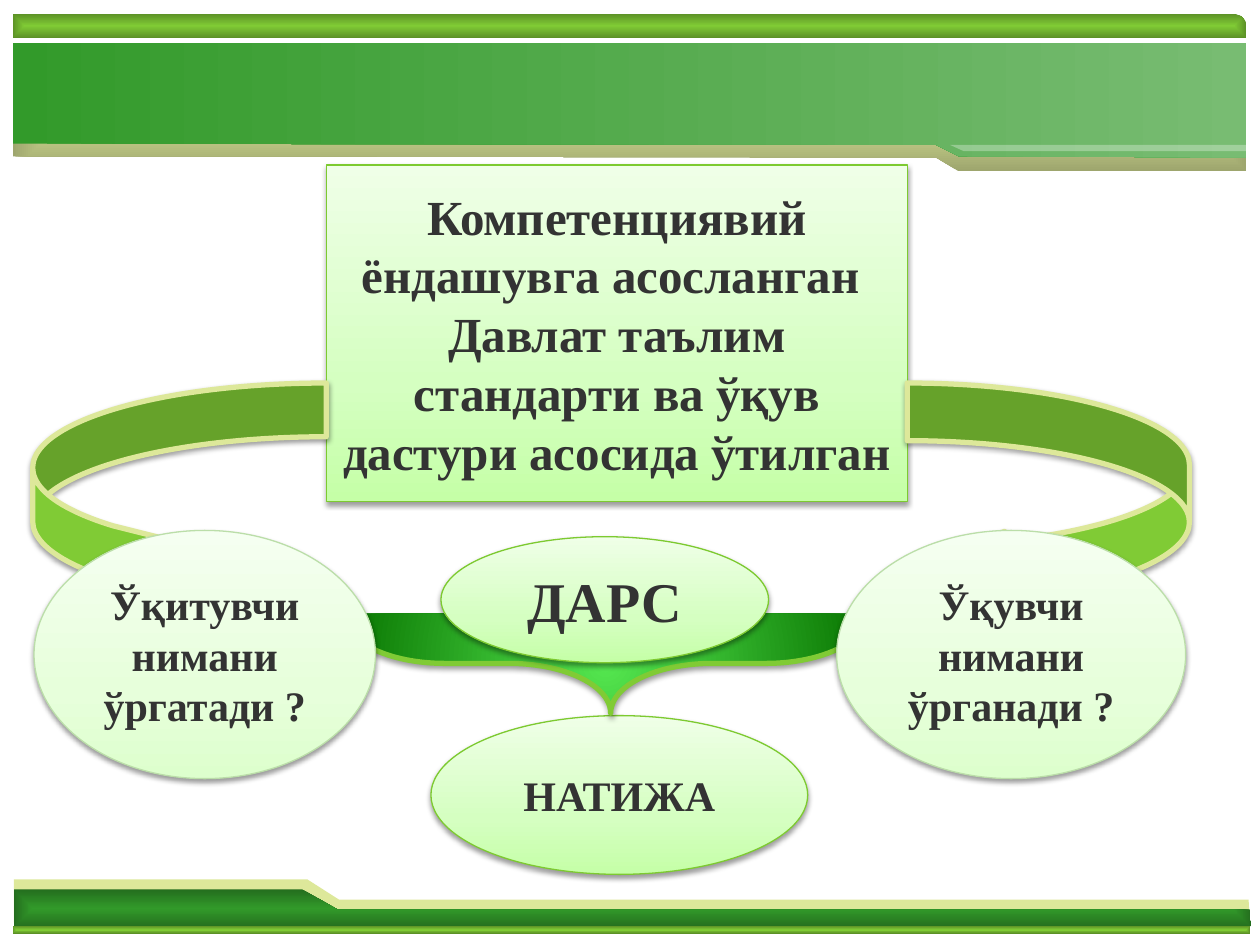
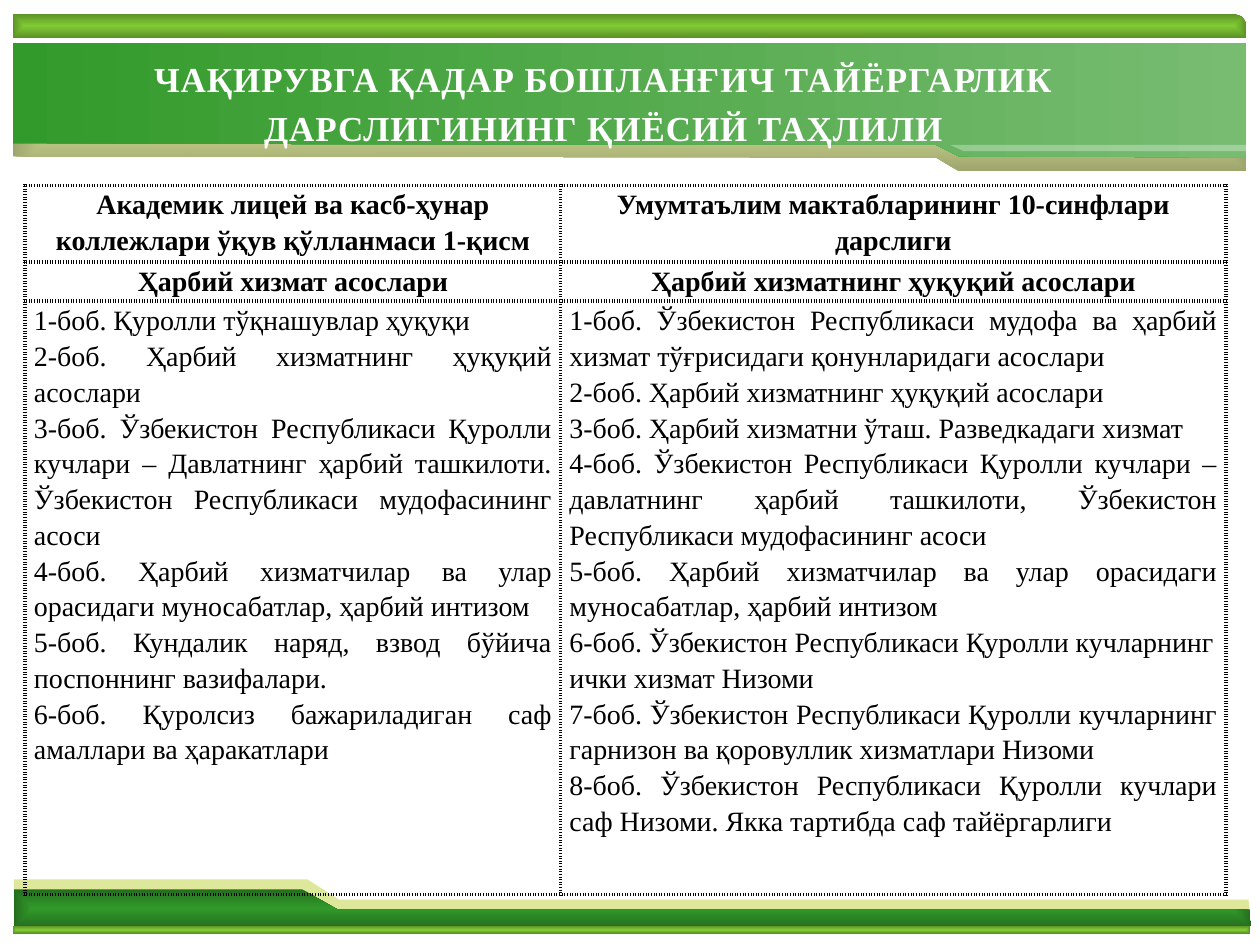
from collections import namedtuple

from lxml import etree
from pptx import Presentation
from pptx.dml.color import RGBColor
from pptx.enum.shapes import MSO_SHAPE as Preset
from pptx.enum.text import MSO_ANCHOR as Anchor, MSO_AUTO_SIZE as AutoSize, PP_ALIGN as Align
from pptx.oxml import parse_xml
from pptx.oxml.ns import nsdecls, qn
from pptx.util import Inches, Pt

Box = namedtuple("Box", "left top width height")

COLORS = {
    "white": "FFFFFF", "black": "000000", "text": "333333",
    "green": "329A2A", "deep_green": "246E1E", "band_end": "78BC72",
    "lime": "80CB35", "dark_lime": "5C9126", "cream": "DDE89A", "khaki": "9EA66E",
    "card_line": "7DCA30", "soft_line": "BBDEA9",
    "brace_center": "55E750", "brace_edge": "087400",
}
CARD_STOPS = [(0, "C5FFA7"), (35, "D5FFC1"), (100, "EFFFE7")]
SOFT_STOPS = [(0, "DDFFCD"), (35, "E7FFDB"), (100, "F5FFF1")]
FONT = "Times New Roman"
HEADER_BOX = Box(0.1, 0.11, 9.79, 1.25)
FOOTER_BOX = Box(0.1, 6.98, 9.82, 0.43)

HEADINGS = [
    ("Академик лицей ва касб-ҳунар коллежлари ўқув қўлланмаси 1-қисм",
     "Умумтаълим мактабларининг 10-синфлари дарслиги"),
    ("Ҳарбий хизмат асослари", "Ҳарбий хизматнинг ҳуқуқий асослари"),
]
LYCEUM_CHAPTERS = [
    "1-боб. Қуролли тўқнашувлар ҳуқуқи",
    "2-боб. Ҳарбий хизматнинг ҳуқуқий асослари",
    "3-боб. Ўзбекистон Республикаси Қуролли кучлари – Давлатнинг ҳарбий ташкилоти. "
    "Ўзбекистон Республикаси мудофасининг асоси",
    "4-боб. Ҳарбий хизматчилар ва улар орасидаги муносабатлар, ҳарбий интизом ",
    "5-боб. Кундалик наряд, взвод бўйича поспоннинг вазифалари.",
    "6-боб. Қуролсиз бажариладиган саф амаллари ва ҳаракатлари",
]
SCHOOL_CHAPTERS = [
    "1-боб. Ўзбекистон Республикаси мудофа ва ҳарбий хизмат тўғрисидаги қонунларидаги асослари",
    "2-боб. Ҳарбий хизматнинг ҳуқуқий асослари",
    "3-боб. Ҳарбий хизматни ўташ. Разведкадаги хизмат",
    "4-боб. Ўзбекистон Республикаси Қуролли кучлари – давлатнинг ҳарбий ташкилоти, "
    "Ўзбекистон Республикаси мудофасининг асоси",
    "5-боб. Ҳарбий хизматчилар ва улар орасидаги муносабатлар, ҳарбий интизом",
    "6-боб. Ўзбекистон Республикаси Қуролли кучларнинг ички хизмат Низоми",
    "7-боб. Ўзбекистон Республикаси Қуролли кучларнинг гарнизон ва қоровуллик хизматлари Низоми",
    "8-боб. Ўзбекистон Республикаси Қуролли кучлари саф Низоми. Якка тартибда саф тайёргарлиги",
]


def color(name):
    return RGBColor.from_string(COLORS[name])


def center_stops(inner, outer):
    return [(0, COLORS[inner]), (100, COLORS[outer])]


def fill_solid(shape, name, alpha=None):
    shape.fill.solid()
    shape.fill.fore_color.rgb = color(name)
    if alpha is not None:
        srgb = shape.element.spPr.find(".//" + qn("a:srgbClr"))
        etree.SubElement(srgb, qn("a:alpha"), val=str(alpha * 1000))


def fill_gradient(shape, stops, angle=None, kind="rect"):
    marks = "".join(f'<a:gs pos="{position * 1000}"><a:srgbClr val="{value}"/></a:gs>'
                    for position, value in stops)
    if angle is None:
        direction = (f'<a:path path="{kind}"><a:fillToRect l="50000" t="50000" '
                     'r="50000" b="50000"/></a:path>')
    else:
        direction = f'<a:lin ang="{angle * 60000}" scaled="0"/>'
    gradient = parse_xml(f'<a:gradFill {nsdecls("a")} rotWithShape="1">'
                         f'<a:gsLst>{marks}</a:gsLst>{direction}</a:gradFill>')
    shape.fill.background()
    properties = shape.element.spPr
    properties.replace(properties.find(qn("a:noFill")), gradient)


def set_line(shape, name, width):
    shape.line.color.rgb = color(name)
    shape.line.width = Pt(width)


def add_shadow(shape):
    effects = shape.element.spPr.find(qn("a:effectLst"))
    effects.append(parse_xml(
        f'<a:outerShdw {nsdecls("a")} blurRad="{Pt(3.1)}" dist="{Pt(1.6)}" dir="5400000" '
        'rotWithShape="0"><a:srgbClr val="000000"><a:alpha val="38000"/></a:srgbClr></a:outerShdw>'))


def write_text(frame, paragraphs, size=16, name="black", bold=True, align=Align.CENTER,
               line_spacing=None, letter_spacing=None):
    for index, text in enumerate(paragraphs):
        paragraph = frame.paragraphs[0] if index == 0 else frame.add_paragraph()
        paragraph.alignment = align
        paragraph.line_spacing = line_spacing
        run = paragraph.add_run()
        run.text = text
        run.font.name = FONT
        run.font.size = Pt(size)
        run.font.bold = bold
        run.font.color.rgb = color(name)
        if letter_spacing:
            run.font._element.set("spc", str(letter_spacing))


def add_preset(slide, preset, box, adjustments=()):
    shape = slide.shapes.add_shape(preset, *map(Inches, box))
    shape.shadow.inherit = False
    for index, value in enumerate(adjustments):
        shape.adjustments[index] = value
    return shape


def add_outline(slide, box, points):
    placed = [(Inches(box.left + x), Inches(box.top + y)) for x, y in points]
    builder = slide.shapes.build_freeform(*placed[0])
    builder.add_line_segments(placed[1:], close=True)
    shape = builder.convert_to_shape()
    shape.shadow.inherit = False
    shape.line.fill.background()
    return shape


def add_footer(slide, box):
    edge = add_outline(slide, box, [(0.01, 0.34), (9.82, 0.34), (9.81, 0.16),
                                    (2.59, 0.16), (2.34, 0), (0.01, 0)])
    fill_solid(edge, "cream")
    base = add_outline(slide, box, [(0.01, 0.38), (9.83, 0.37), (9.82, 0.24),
                                    (2.58, 0.24), (2.3, 0.08), (0.01, 0.08)])
    fill_gradient(base, center_stops("green", "deep_green"))
    strip = add_preset(slide, Preset.RECTANGLE, Box(box.left, box.top + 0.37, box.width, 0.06))
    fill_gradient(strip, center_stops("lime", "dark_lime"))
    strip.line.fill.background()


def add_header(slide, box):
    right = box.width
    bar = add_outline(slide, box, [(0, 0), (9.7, 0), (9.75, 0.02), (9.78, 0.05),
                                   (right, 0.08), (right, 0.19), (0, 0.19)])
    fill_gradient(bar, center_stops("lime", "dark_lime"))

    def add_stepped_band(low, step, bottom):
        return add_outline(slide, box, [(right, 0.23), (0, 0.23), (0, low), (7.33, low + 0.01),
                                        (7.51, step), (right, bottom)])

    fill_gradient(add_stepped_band(1.13, 1.25, 1.25), center_stops("cream", "khaki"))
    fill_gradient(add_stepped_band(1.03, 1.13, 1.14), center_stops("green", "band_end"), angle=0)
    gloss = add_outline(slide, box, [(7.44, 1.04), (9.8, 1.04), (9.8, 1.09), (7.55, 1.09)])
    fill_solid(gloss, "white", alpha=30)


def add_themed_slide(presentation, layout_index):
    slide = presentation.slides.add_slide(presentation.slide_layouts[layout_index])
    add_footer(slide, FOOTER_BOX)
    add_header(slide, HEADER_BOX)
    return slide


def add_card(slide, preset, box, paragraphs, size=24, stops=CARD_STOPS, line="card_line"):
    card = add_preset(slide, preset, box)
    fill_gradient(card, stops, angle=270)
    set_line(card, line, 0.75)
    add_shadow(card)
    card.text_frame.word_wrap = True
    card.text_frame.vertical_anchor = Anchor.MIDDLE
    write_text(card.text_frame, paragraphs, size=size, name="text")


def add_curved_arrow(slide, preset, box, adjustments):
    arrow = add_preset(slide, preset, box, adjustments)
    fill_solid(arrow, "lime")
    set_line(arrow, "cream", 3)
    add_shadow(arrow)


def add_brace(slide, box):
    brace = add_preset(slide, Preset.LEFT_BRACE, box, (1.024, 0.51))
    brace.rotation = 270
    fill_gradient(brace, center_stops("brace_center", "brace_edge"), kind="circle")
    set_line(brace, "lime", 3)
    add_shadow(brace)


def add_lesson_diagram(slide, box):
    def place(left, top, width, height):
        return Box(box.left + left, box.top + top, width, height)

    add_card(slide, Preset.RECTANGLE, place(2.33, 0, 4.61, 2.67),
             ["Компетенциявий ёндашувга асосланган ",
              "Давлат таълим стандарти ва ўқув дастури асосида ўтилган"], size=28)
    add_card(slide, Preset.OVAL, place(3.16, 4.37, 2.99, 1.26), ["НАТИЖА"])
    add_curved_arrow(slide, Preset.CURVED_LEFT_ARROW, place(6.94, 1.73, 2.24, 1.83),
                     (0.25, 0.335, 0.423))
    add_brace(slide, place(4.15, 1.87, 0.79, 4.17))
    add_curved_arrow(slide, Preset.CURVED_RIGHT_ARROW, place(0, 1.73, 2.33, 1.77),
                     (0.453, 0.241, 0.955))
    for left, width, question in [(0.01, 2.71, "Ўқитувчи нимани ўргатади ?"),
                                  (6.38, 2.77, "Ўқувчи нимани ўрганади ?")]:
        add_card(slide, Preset.OVAL, place(left, 2.9, width, 1.97), [question],
                 stops=SOFT_STOPS, line="soft_line")
    add_card(slide, Preset.OVAL, place(3.24, 2.95, 2.6, 1), ["ДАРС"], size=32)


def add_title(slide, box, lines):
    title = slide.shapes.title
    title.left, title.top, title.width, title.height = map(Inches, box)
    title.element.getparent().append(title.element)
    frame = title.text_frame
    frame.word_wrap = False
    frame.auto_size = AutoSize.NONE
    frame.vertical_anchor = Anchor.TOP
    write_text(frame, lines, size=20, name="white", line_spacing=1.15, letter_spacing=50)


def format_cell(cell):
    cell.margin_left = cell.margin_right = Inches(0.07)
    cell.margin_top = cell.margin_bottom = 0
    cell.fill.background()
    properties = cell._tc.get_or_add_tcPr()
    for index, side in enumerate(("lnL", "lnR", "lnT", "lnB")):
        properties.insert(index, parse_xml(
            f'<a:{side} {nsdecls("a")} w="{Pt(2.25)}"><a:solidFill>'
            f'<a:srgbClr val="{COLORS["black"]}"/></a:solidFill>'
            f'<a:prstDash val="sysDot"/></a:{side}>'))


def add_comparison_table(slide, box):
    table = slide.shapes.add_table(3, 2, *map(Inches, box)).table
    table.first_row = table.horz_banding = False
    for column, width in zip(table.columns, (4.25, 5.28)):
        column.width = Inches(width)
    for row, height in zip(table.rows, (0.61, 0.31, 4.71)):
        row.height = Inches(height)
    for cell in table.iter_cells():
        format_cell(cell)
    for row_index, headings in enumerate(HEADINGS):
        for column_index, heading in enumerate(headings):
            write_text(table.cell(row_index, column_index).text_frame, [heading],
                       line_spacing=1.15)
    for column_index, chapters in enumerate((LYCEUM_CHAPTERS, SCHOOL_CHAPTERS)):
        write_text(table.cell(2, column_index).text_frame, chapters, bold=False,
                   align=Align.JUSTIFY, line_spacing=1.15)
    table.cell(2, 1).text_frame.paragraphs[5].alignment = Align.LEFT


def main():
    presentation = Presentation()
    presentation.slide_width, presentation.slide_height = Inches(10), Inches(7.5)
    add_lesson_diagram(add_themed_slide(presentation, 6), Box(0.26, 1.31, 9.18, 5.63))
    comparison = add_themed_slide(presentation, 5)
    add_comparison_table(comparison, Box(0.2, 1.47, 9.53, 5.63))
    add_title(comparison, Box(1.12, 0.36, 7.34, 0.88),
              ["ЧАҚИРУВГА ҚАДАР БОШЛАНҒИЧ ТАЙЁРГАРЛИК ", "ДАРСЛИГИНИНГ ҚИЁСИЙ ТАҲЛИЛИ"])
    presentation.save("out.pptx")


if __name__ == "__main__":
    main()
